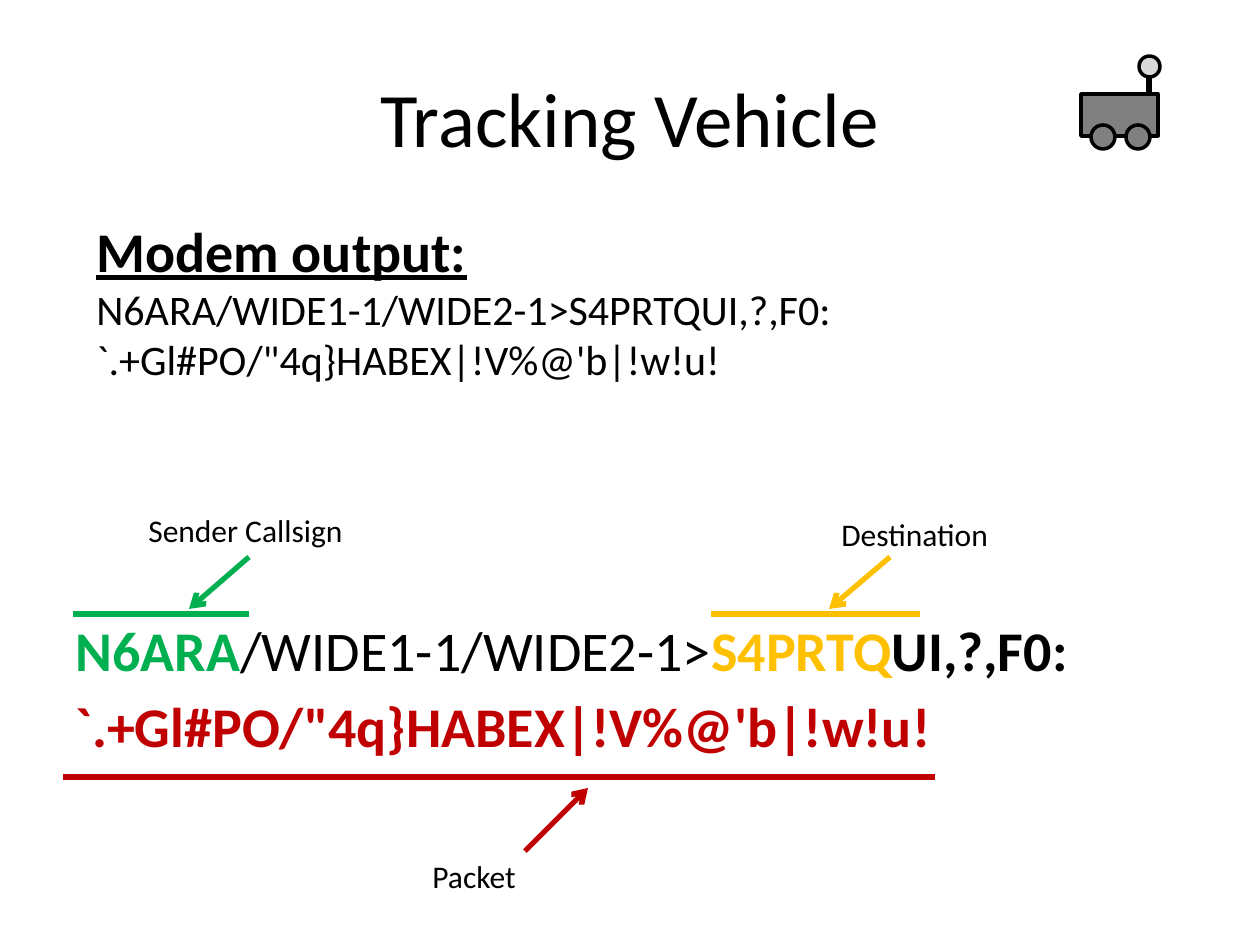
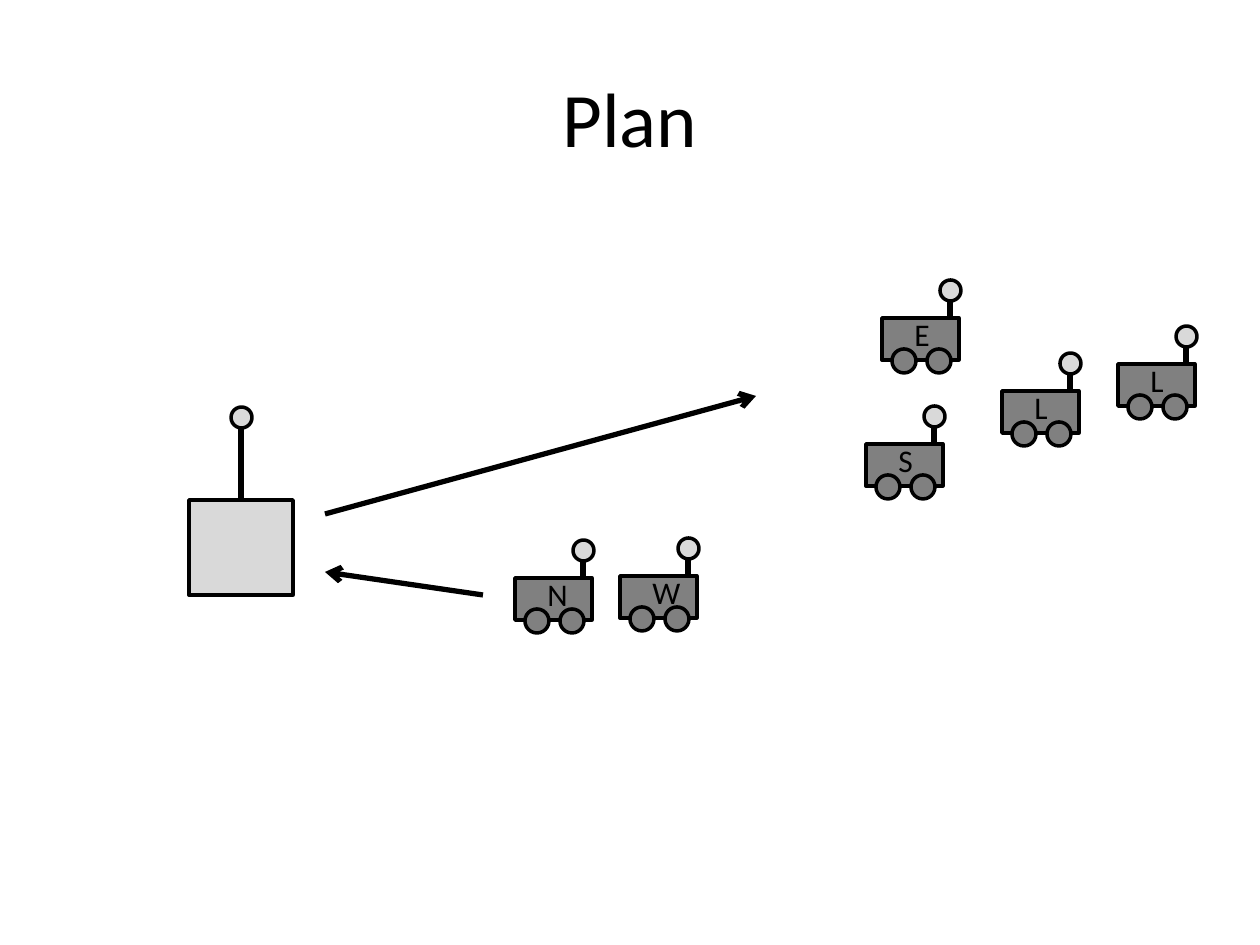
"""Build two slides on the tracking vehicle: its packet format and the plan."""
from lxml.etree import SubElement
from pptx import Presentation
from pptx.dml.color import RGBColor
from pptx.enum.shapes import MSO_CONNECTOR, MSO_SHAPE
from pptx.enum.text import MSO_ANCHOR, PP_ALIGN
from pptx.oxml.ns import qn
from pptx.util import Pt

BLACK = RGBColor(0x00, 0x00, 0x00)
GRAY = RGBColor(0x80, 0x80, 0x80)
SILVER = RGBColor(0xD9, 0xD9, 0xD9)
GREEN = RGBColor(0x00, 0xB0, 0x50)
AMBER = RGBColor(0xFF, 0xC0, 0x00)
RED = RGBColor(0xC0, 0x00, 0x00)

FONT = "Calibri"
SCALE = 914400 / 126
SLIDE_SIZE = (1260, 945)
TITLE_BOX = (63, 38, 1134, 158)

SENDER, ROUTE, DESTINATION, SUFFIX = "N6ARA", "/WIDE1-1/WIDE2-1>", "S4PRTQ", "UI,?,F0:"
PACKET = "`.+Gl#PO/\"4q}HABEX|!V%@'b|!w!u!"

OUTPUT_BOX = (84, 210, 1065, 183)
OUTPUT = [
    [("Modem output:", {"size": Pt(32), "bold": True, "underline": True})],
    [(SENDER + ROUTE + DESTINATION + SUFFIX, {"size": Pt(24)})],
    [(PACKET, {"size": Pt(24)})],
]
MESSAGE_BOX = (63, 609, 1124, 221)
MESSAGE = [
    [(SENDER, {"bold": True, "color": GREEN}), (ROUTE, {}),
     (DESTINATION, {"bold": True, "color": AMBER}), (SUFFIX, {"bold": True})],
    [(PACKET, {"bold": True, "color": RED})],
]
CALLOUTS = [
    ("Sender Callsign", (136, 505), GREEN, (249, 557, 189, 609), (73, 614, 249, 614)),
    ("Destination", (829, 509), AMBER, (890, 557, 829, 609), (711, 614, 920, 614)),
    ("Packet", (420, 851), RED, (525, 851, 588, 788), (63, 777, 935, 777)),
]
CALLOUT_SIZE = (242, 50)

TRACKER = (1081, 94)
FLEET = [
    ("N", 515, 578), ("E", 882, 318), ("W", 620, 576),
    ("S", 866, 444), ("L", 1118, 364), ("L", 1002, 391),
]
BODY_SIZE = (77, 42)
WHEELS_X, WHEEL_Y, WHEEL = (10, 45), 31, 24
BALL = 21
LETTER_BOX = (20, -9, 54, 50)

STATION = (189, 500, 104, 95)
LINKS = [(483, 595, 325, 572), (325, 514, 756, 396)]


def emu(*lengths):
    return [round(n * SCALE) for n in lengths]


def add_text(s, box, paragraphs, size=18, before=0, align=PP_ALIGN.LEFT, anchor=MSO_ANCHOR.TOP):
    tf = s.shapes.add_textbox(*emu(*box)).text_frame
    tf.word_wrap = True
    tf.vertical_anchor = anchor
    for i, runs in enumerate(paragraphs):
        p = tf.paragraphs[0] if i == 0 else tf.add_paragraph()
        p.alignment = align
        p.space_before = Pt(before)
        for text, changes in runs:
            r = p.add_run()
            r.text = text
            fmt = {"name": FONT, "size": Pt(size), "color": BLACK} | changes
            r.font.color.rgb = fmt.pop("color")
            for key, value in fmt.items():
                setattr(r.font, key, value)


def add_part(s, kind, box, fill):
    sp = s.shapes.add_shape(kind, *emu(*box))
    sp.shadow.inherit = False
    sp.fill.solid()
    sp.fill.fore_color.rgb = fill
    sp.line.color.rgb = BLACK
    sp.line.width = Pt(2)
    return sp


def add_line(s, ends, color=BLACK, width=3, arrow=False):
    line = s.shapes.add_connector(MSO_CONNECTOR.STRAIGHT, *emu(*ends))
    line.line.color.rgb = color
    line.line.width = Pt(width)
    if arrow:
        SubElement(line.line._get_or_add_ln(), qn("a:tailEnd"), type="arrow")
    SubElement(line._element.spPr, qn("a:effectLst"))
    return line


def add_antenna(s, x, top, height):
    mast = add_line(s, (x, top, x, top + height), width=3.5)
    add_part(s, MSO_SHAPE.OVAL, (x - BALL // 2, top - BALL + 2, BALL, BALL), SILVER)
    return mast


def add_vehicle(s, x, y, letter=None):
    add_part(s, MSO_SHAPE.RECTANGLE, (x, y, *BODY_SIZE), GRAY)
    for dx in WHEELS_X:
        add_part(s, MSO_SHAPE.OVAL, (x + dx, y + WHEEL_Y, WHEEL, WHEEL), GRAY)
    add_antenna(s, x + 68, y - 19, 19)
    if letter:
        dx, dy, w, h = LETTER_BOX
        add_text(s, (x + dx, y + dy, w, h), [[(letter, {})]])


def add_slide(prs, title):
    s = prs.slides.add_slide(prs.slide_layouts[6])
    add_text(s, TITLE_BOX, [[(title, {})]], 44, align=PP_ALIGN.CENTER, anchor=MSO_ANCHOR.MIDDLE)
    return s


def build_tracking(prs):
    s = add_slide(prs, "Tracking Vehicle")
    add_vehicle(s, *TRACKER)
    add_text(s, MESSAGE_BOX, MESSAGE, 32, before=5)
    add_text(s, OUTPUT_BOX, OUTPUT)
    for label, place, color, pointer, rule in CALLOUTS:
        add_line(s, pointer, color, arrow=True)
        add_line(s, rule, color)
        add_text(s, (*place, *CALLOUT_SIZE), [[(label, {})]])


def build_plan(prs):
    s = add_slide(prs, "Plan")
    station = add_part(s, MSO_SHAPE.RECTANGLE, STATION, SILVER)
    x, y, w, _ = STATION
    add_antenna(s, x + w // 2, y - 74, 74).end_connect(station, 0)
    for letter, x, y in FLEET:
        add_vehicle(s, x, y, letter)
    for ends in LINKS:
        add_line(s, ends, arrow=True)


def main():
    prs = Presentation()
    prs.slide_width, prs.slide_height = emu(*SLIDE_SIZE)
    build_tracking(prs)
    build_plan(prs)
    prs.save("out.pptx")


if __name__ == "__main__":
    main()
